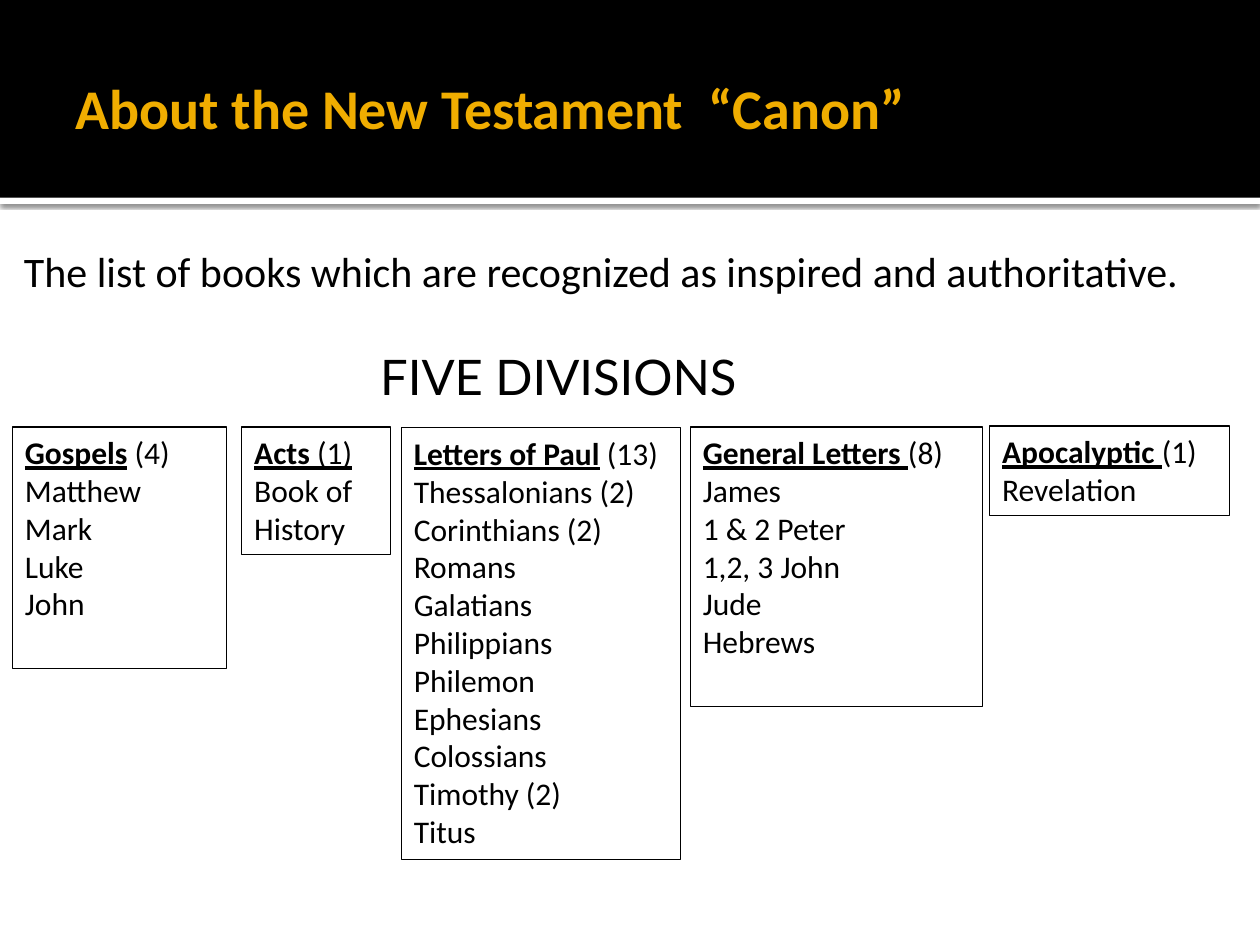
from lxml import etree
from pptx import Presentation
from pptx.dml.color import RGBColor
from pptx.enum import shapes, text
from pptx.oxml import ns
from pptx.util import Pt

COLORS = {"ink": "000000", "paper": "FFFFFF", "gold": "F0AD00"}

# left, top, width, height, heading, count, count underlined, entries
DIVISIONS = [
    (7.2, 244, 122.4, 138.2, "Gospels", " (4)", False,
     ["Matthew", "Mark", "Luke", "John"]),
    (138.2, 244, 85, 72.7, "Acts ", "(1)", True, ["Book of History"]),
    (229.4, 244.4, 159.6, 246.8, "Letters of Paul", " (13)", False,
     ["Thessalonians (2)", "Corinthians (2)", "Romans", "Galatians",
      "Philippians", "Philemon", "Ephesians", "Colossians", "Timothy (2)",
      "Titus"]),
    (394.5, 244, 167, 159.8, "General Letters ", "(8)", False,
     ["James", "1 & 2 Peter", "1,2, 3 John", "Jude", "Hebrews"]),
    (565.6, 243.4, 137.2, 51, "Apocalyptic ", "(1)", False, ["Revelation"]),
]


def rgb(name):
    return RGBColor.from_string(COLORS[name])


class SlideBuilder:
    def __init__(self, slide, font="Calibri"):
        self.slide = slide
        self.font = font

    def set_frame(self, shape, insets=(7.2, 3.6, 7.2, 3.6), wrap=True,
                  anchor=text.MSO_ANCHOR.TOP):
        frame = shape.text_frame
        sides = ("margin_left", "margin_top", "margin_right", "margin_bottom")
        values = dict(zip(sides, map(Pt, insets)), word_wrap=wrap,
                      vertical_anchor=anchor,
                      auto_size=text.MSO_AUTO_SIZE.NONE)
        for name, value in values.items():
            setattr(frame, name, value)
        return frame

    def add_run(self, paragraph, words, size, color="ink", font=None, **style):
        paragraph.alignment = text.PP_ALIGN.LEFT
        run = paragraph.add_run()
        run.text = words
        values = {"size": Pt(size), "name": font or self.font, **style}
        for name, value in values.items():
            setattr(run.font, name, value)
        run.font.color.rgb = rgb(color)

    def rectangle(self, box, fill=None, line=None):
        shape = self.slide.shapes.add_shape(
            shapes.MSO_SHAPE.RECTANGLE, *map(Pt, box))
        shape.shadow.inherit = False
        if fill:
            shape.fill.solid()
            shape.fill.fore_color.rgb = rgb(fill)
        else:
            shape.fill.background()
        if line:
            shape.line.color.rgb = rgb(line)
            shape.line.width = Pt(0.75)
        else:
            shape.line.fill.background()
        return shape

    def band(self, box, fill, shadow=False):
        """Full-width strip behind the title."""
        shape = self.rectangle(box, fill)
        if shadow:
            effects = shape.element.spPr.find(ns.qn("a:effectLst"))
            outer = etree.SubElement(
                effects, ns.qn("a:outerShdw"), blurRad=str(Pt(2.5)),
                dist=str(Pt(0.8)), dir="5400000", algn="t", rotWithShape="0")
            color = etree.SubElement(
                outer, ns.qn("a:srgbClr"), val=COLORS["ink"])
            etree.SubElement(color, ns.qn("a:alpha"), val="60000")
        self.slide.shapes.title.element.addprevious(shape.element)

    def title(self, box, words):
        shape = self.slide.shapes.title
        shape.left, shape.top, shape.width, shape.height = map(Pt, box)
        frame = self.set_frame(shape, (7.2, 3.6, 3.6, 3.6),
                               anchor=text.MSO_ANCHOR.MIDDLE)
        self.add_run(frame.paragraphs[0], words, 32, "gold", bold=True)

    def label(self, box, words, size, font=None, **frame_style):
        shape = self.slide.shapes.add_textbox(*map(Pt, box))
        frame = self.set_frame(shape, **frame_style)
        self.add_run(frame.paragraphs[0], words, size, font=font)

    def division(self, box, heading, count, count_underlined, entries):
        frame = self.set_frame(self.rectangle(box, line="ink"))
        first = frame.paragraphs[0]
        self.add_run(first, heading, 18, bold=True, underline=True)
        self.add_run(first, count, 18, underline=count_underlined)
        for entry in entries:
            self.add_run(frame.add_paragraph(), entry, 18)


def main():
    presentation = Presentation()
    presentation.slide_width, presentation.slide_height = Pt(720), Pt(540)
    slide = presentation.slides.add_slide(presentation.slide_layouts[5])
    builder = SlideBuilder(slide)

    builder.band((0, 113, 720, 3.6), "paper", shadow=True)
    builder.band((0, 0, 720, 113), "ink")
    builder.title((36, 12.2, 648, 98.6), "About the New Testament  “Canon”")
    builder.label(
        (0, 133, 720, 50),
        "The list of books which are recognized as inspired and authoritative.",
        24, insets=(13.7, 7.2, 7.2, 3.6))
    for left, top, width, height, *content in DIVISIONS:
        builder.division((left, top, width, height), *content)
    builder.label((210.2, 194.4, 222.5, 41), "FIVE DIVISIONS", 28,
                  font="Lato", wrap=False)
    presentation.save("out.pptx")


if __name__ == "__main__":
    main()
